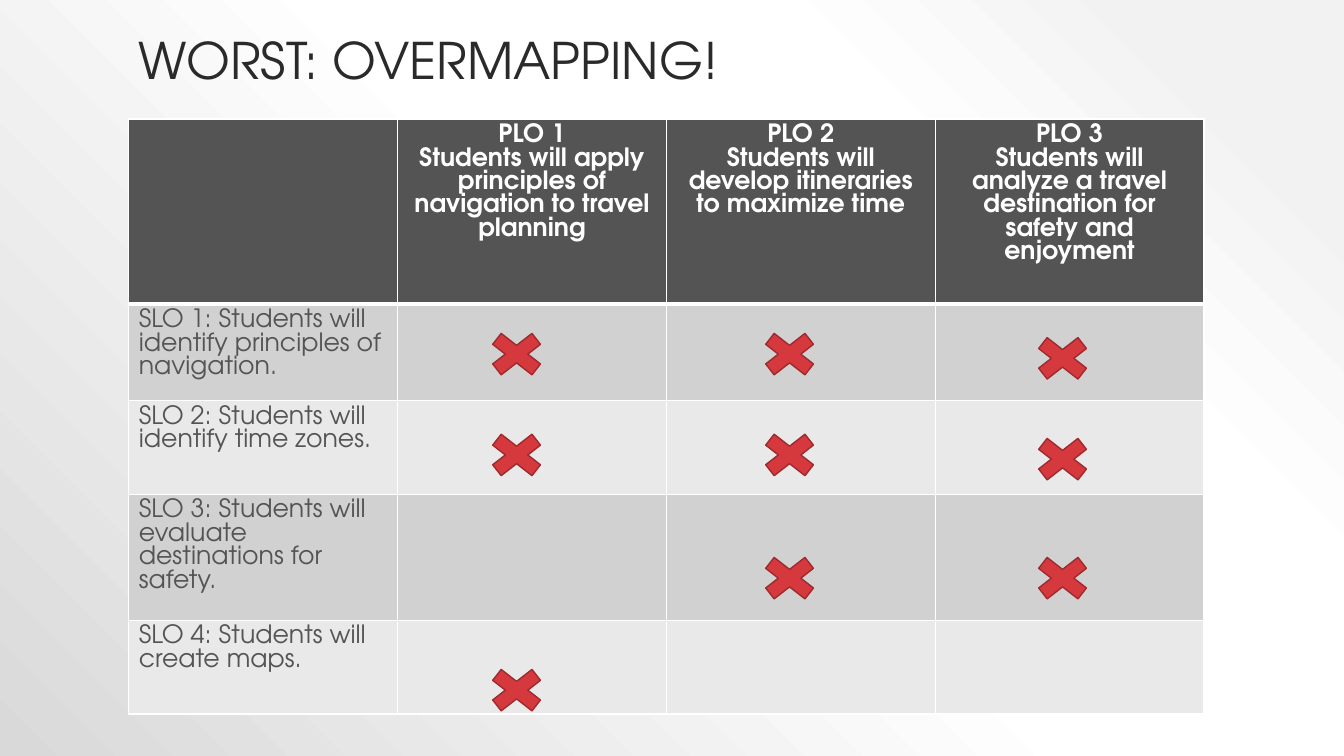
from dataclasses import dataclass

from lxml.etree import SubElement
from pptx import Presentation
from pptx.dml.color import RGBColor
from pptx.enum.shapes import MSO_SHAPE
from pptx.enum.text import MSO_ANCHOR, MSO_AUTO_SIZE, PP_ALIGN
from pptx.oxml.ns import qn
from pptx.util import Pt


@dataclass(frozen=True)
class Theme:
    font: str = "TeX Gyre Adventor"
    title_size: int = 36
    table_size: int = 18
    title: str = "2A2A2A"
    dark: str = "545454"
    light: str = "FFFFFF"
    bands: tuple = ("D1D1D1", "E9E9E9")
    mark_fill: str = "D5393D"
    mark_line: str = "9E2A2D"
    backdrop: tuple = ((10, "F2F2F2"), (28, "FFFFFF"), (48, "FFFFFF"), (100, "D9D9D9"))


THEME = Theme()

HEADINGS = [
    [],
    ["PLO 1", "Students will apply principles of navigation to travel planning"],
    ["PLO 2", "Students will develop itineraries to maximize time"],
    ["PLO 3", "Students will analyze a travel destination for safety and enjoyment"],
]
OUTCOMES = [
    "SLO 1: Students will identify principles of navigation.",
    "SLO 2: Students will identify time zones.",
    "SLO 3: Students will evaluate destinations for safety.",
    "SLO 4: Students will create maps.",
]
LEFT, COLUMN_WIDTH = 92, 192
ROW_HEIGHTS = [132, 69, 67, 90, 67]

# Each row of marks: the top of the mark in each PLO column that has one
MARK_LEFT, MARK_STEP = 342, 195
MARK_ROWS = [
    {0: 232, 1: 232, 2: 235},
    {0: 304, 1: 304, 2: 307},
    {1: 392, 2: 392},
    {0: 472},
]


def set_values(target, values):
    for name, value in values.items():
        setattr(target, name, value)


def write(frame, lines, size, color, bold=False, align=PP_ALIGN.LEFT, spacing=None):
    for number, line in enumerate(lines):
        para = frame.paragraphs[0] if number == 0 else frame.add_paragraph()
        set_values(para, {"alignment": align, "line_spacing": spacing})
        span = para.add_run()
        span.text = line
        set_values(span.font, {"name": THEME.font, "size": Pt(size), "bold": bold})
        span.font.color.rgb = RGBColor.from_string(color)


def add_stop_color(parent, color):
    SubElement(parent, qn("a:srgbClr"), val=color)


def paint_background(page):
    page.background.fill.gradient()
    gradient = page.element.find(".//" + qn("a:gradFill"))
    for child in list(gradient):
        gradient.remove(child)
    stops = SubElement(gradient, qn("a:gsLst"))
    for position, color in THEME.backdrop:
        stop = SubElement(stops, qn("a:gs"), pos=str(position * 1000))
        add_stop_color(stop, color)
    # Circular gradient centred on the top right corner
    circle = SubElement(gradient, qn("a:path"), {"path": "circle"})
    SubElement(circle, qn("a:fillToRect"), l="100000", b="100000")


def add_title(page, text):
    box = page.shapes.title
    set_values(box, {"left": Pt(LEFT), "top": Pt(18), "width": Pt(768), "height": Pt(50.4)})
    set_values(box.text_frame, {
        "word_wrap": True,
        "auto_size": MSO_AUTO_SIZE.NONE,
        "vertical_anchor": MSO_ANCHOR.BOTTOM,
    })
    write(box.text_frame, [text], THEME.title_size, THEME.title, spacing=0.9)


def style_cell(cell, fill, border_widths):
    # Borders must come before the fill in the cell properties
    properties = cell._tc.get_or_add_tcPr()
    for side, width in border_widths.items():
        border = SubElement(properties, qn("a:ln" + side), w=str(Pt(width)))
        add_stop_color(SubElement(border, qn("a:solidFill")), THEME.light)
    cell.fill.solid()
    cell.fill.fore_color.rgb = RGBColor.from_string(fill)


def add_outcome_table(page):
    columns = len(HEADINGS)
    table = page.shapes.add_table(
        len(ROW_HEIGHTS), columns, Pt(LEFT), Pt(85),
        Pt(columns * COLUMN_WIDTH), Pt(sum(ROW_HEIGHTS)),
    ).table
    for column in table.columns:
        column.width = Pt(COLUMN_WIDTH)
    for number, height in enumerate(ROW_HEIGHTS):
        table.rows[number].height = Pt(height)
        fill = THEME.bands[(number - 1) % 2] if number else THEME.dark
        borders = {"L": 1, "R": 1, "T": 3 if number == 1 else 1, "B": 1 if number else 3}
        for column in range(columns):
            style_cell(table.cell(number, column), fill, borders)
    for column, lines in enumerate(HEADINGS):
        write(table.cell(0, column).text_frame, lines, THEME.table_size,
              THEME.light, bold=True, align=PP_ALIGN.CENTER)
    for number, outcome in enumerate(OUTCOMES, start=1):
        write(table.cell(number, 0).text_frame, [outcome], THEME.table_size, THEME.dark)


def add_mark(page, left, top):
    mark = page.shapes.add_shape(
        MSO_SHAPE.MATH_MULTIPLY, Pt(left), Pt(top), Pt(54), Pt(42))
    mark.shadow.inherit = False
    mark.fill.solid()
    mark.fill.fore_color.rgb = RGBColor.from_string(THEME.mark_fill)
    mark.line.color.rgb = RGBColor.from_string(THEME.mark_line)
    mark.line.width = Pt(1)


def main():
    deck = Presentation()
    set_values(deck, {"slide_width": Pt(960), "slide_height": Pt(540)})
    page = deck.slides.add_slide(deck.slide_layouts[5])
    paint_background(page)
    add_title(page, "WORST: OVERMAPPING!")
    add_outcome_table(page)
    for tops in MARK_ROWS:
        for column, top in tops.items():
            add_mark(page, MARK_LEFT + column * MARK_STEP, top)
    deck.save("out.pptx")


if __name__ == "__main__":
    main()
